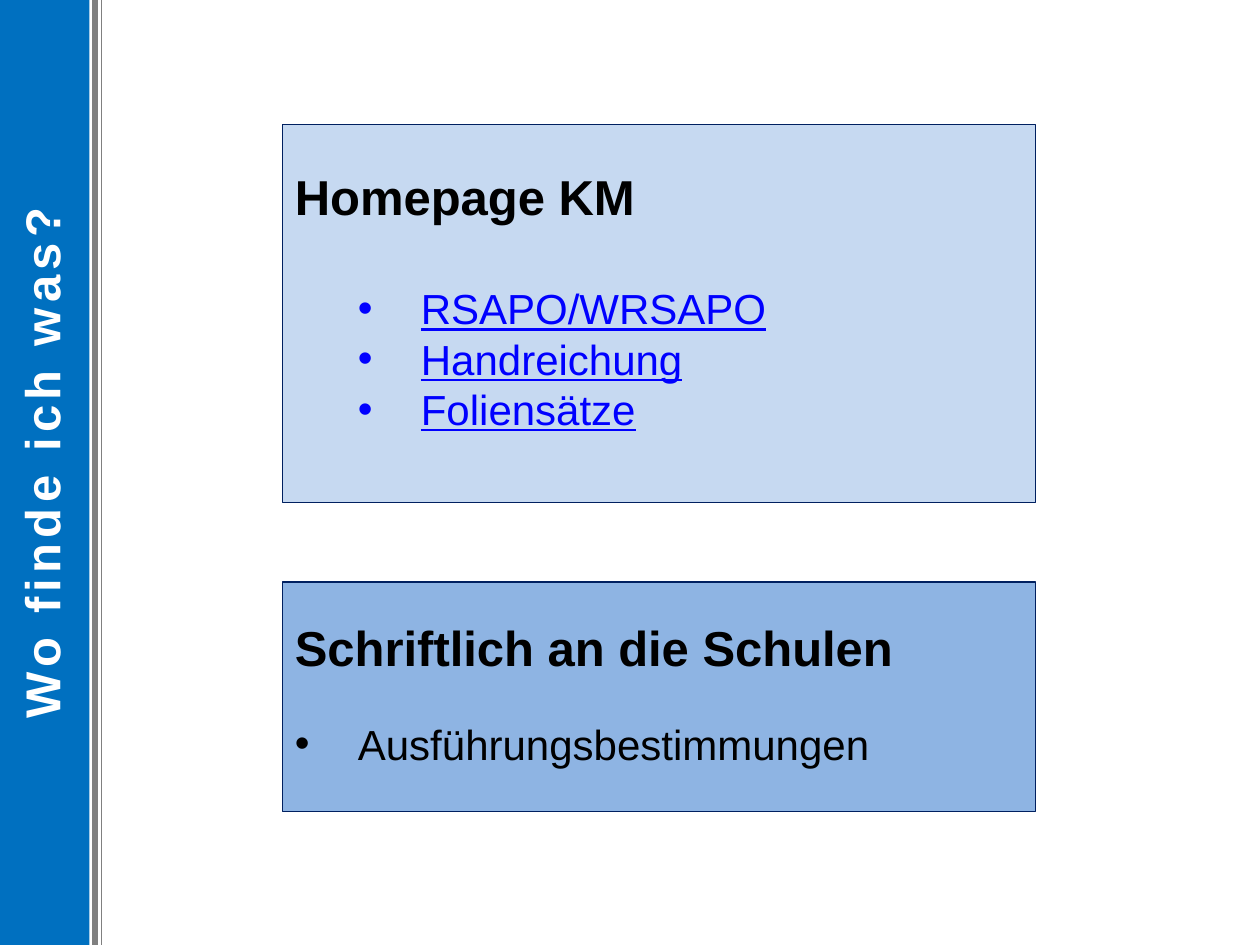
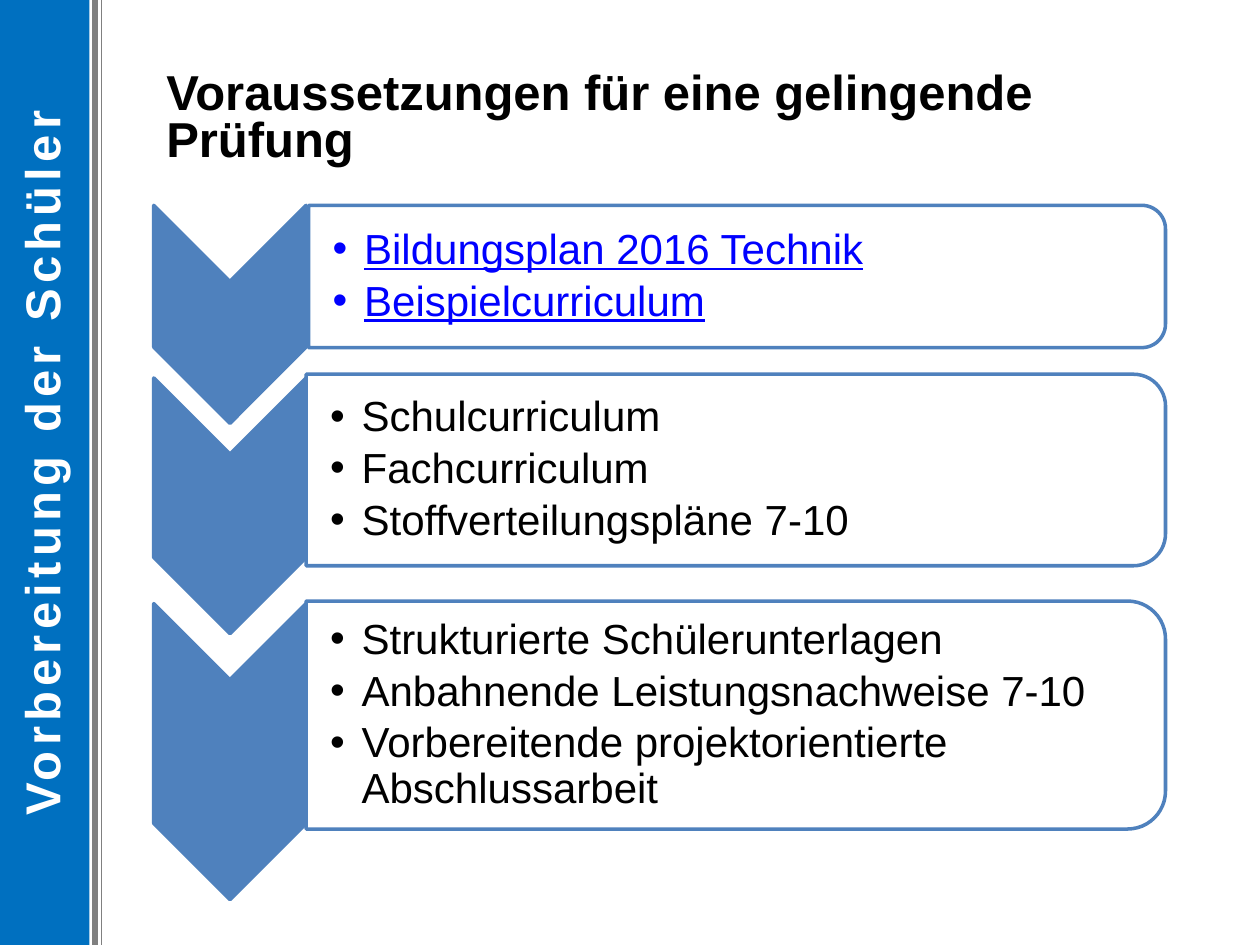
from lxml import etree
from pptx import Presentation
from pptx.dml.color import RGBColor
from pptx.enum.shapes import MSO_CONNECTOR, MSO_SHAPE
from pptx.enum.text import MSO_ANCHOR, MSO_AUTO_SIZE, PP_ALIGN
from pptx.oxml.ns import qn
from pptx.util import Inches, Pt

STRAIGHT = MSO_CONNECTOR.STRAIGHT
RECTANGLE = MSO_SHAPE.RECTANGLE
CHEVRON = MSO_SHAPE.CHEVRON
ROUNDED_PANEL = MSO_SHAPE.ROUND_2_SAME_RECTANGLE
TOP, MIDDLE = MSO_ANCHOR.TOP, MSO_ANCHOR.MIDDLE
LEFT, CENTER = PP_ALIGN.LEFT, PP_ALIGN.CENTER
NO_AUTOSIZE = MSO_AUTO_SIZE.NONE

SLIDE_WIDTH, SLIDE_HEIGHT = 10, 7.5
TWO_CONTENT_LAYOUT, COMPARISON_LAYOUT = 3, 4
BLACK, WHITE, LINK = "000000", "FFFFFF", "0000FF"
BAND, GREY, NAVY, STEEL = "0070C0", "808080", "002060", "4F81BD"
RULES = [(0.75, 3), (0.77, 1.5), (0.8, 0.25)]

HEADING = {"name": "Arial", "size": Pt(28), "bold": True, "underline": False}
ITEM = {"name": "Arial", "size": Pt(24), "bold": False, "underline": False}
LINKED_ITEM = {**ITEM, "underline": True}


def color(hex_value):
    return RGBColor.from_string(hex_value)


def set_attributes(target, values):
    for name, value in values.items():
        setattr(target, name, value)


def turn_box(box):
    left, top, width, height = box
    return left + (width - height) / 2, top + (height - width) / 2, height, width


def paint(shape, fill, line=None, line_width=0.75):
    shape.fill.solid()
    shape.fill.fore_color.rgb = color(fill)
    if line:
        shape.line.color.rgb = color(line)
        shape.line.width = Pt(line_width)
    else:
        shape.line.fill.background()


def add_preset(slide, kind, box, fill, line=None, line_width=0.75, rotation=0):
    shape_box = turn_box(box) if rotation else box
    shape = slide.shapes.add_shape(kind, *map(Inches, shape_box))
    shape.rotation = rotation
    shape.shadow.inherit = False
    paint(shape, fill, line, line_width)
    return shape


def place_placeholder(slide, index, box, anchor=TOP, insets=(0.1, 0.05, 0.1, 0.05)):
    shape = slide.placeholders[index]
    slide.shapes._spTree.append(shape._element)
    names = ("left", "top", "width", "height")
    set_attributes(shape, dict(zip(names, map(Inches, box))))
    margins = ("margin_left", "margin_top", "margin_right", "margin_bottom")
    set_attributes(shape.text_frame, {
        "word_wrap": True, "auto_size": NO_AUTOSIZE, "vertical_anchor": anchor,
        **dict(zip(margins, map(Inches, insets)))})
    return shape


def write_paragraph(frame, text, font, hex_value, alignment=LEFT, indent=0,
                    hanging=0, line_spacing=1.0, space_after=0):
    paragraph = frame.paragraphs[0]
    if paragraph.runs:
        paragraph = frame.add_paragraph()
    set_attributes(paragraph, {
        "alignment": alignment, "line_spacing": line_spacing,
        "space_before": Pt(0), "space_after": Pt(space_after)})
    properties = paragraph._p.get_or_add_pPr()
    properties.set("marL", str(Inches(indent)))
    properties.set("indent", str(-Inches(hanging)))
    if hanging:
        etree.SubElement(properties, qn("a:buFont")).set("typeface", "Arial")
        etree.SubElement(properties, qn("a:buChar")).set("char", "•")
    else:
        etree.SubElement(properties, qn("a:buNone"))
    run = paragraph.add_run()
    run.text = text
    set_attributes(run.font, font)
    run.font.color.rgb = color(hex_value)
    return run


def add_side_band(slide, title):
    add_preset(slide, RECTANGLE, (0, 0, 0.71, SLIDE_HEIGHT), BAND)
    for position, width in RULES:
        rule = slide.shapes.add_connector(
            STRAIGHT, Inches(position), Inches(SLIDE_HEIGHT), Inches(position), 0)
        rule.line.color.rgb = color(GREY)
        rule.line.width = Pt(width)
        etree.SubElement(rule._element.spPr, qn("a:effectLst"))
    shape = place_placeholder(slide, 0, turn_box((0.04, 0.21, 0.67, 6.93)))
    shape.rotation = 270
    run = write_paragraph(shape.text_frame, title, HEADING, WHITE, CENTER)
    run._r.get_or_add_rPr().set("spc", "300")


def add_source_box(slide, index, box, fill, heading, items, font, hex_value,
                   top_inset, heading_gap, indent):
    shape = place_placeholder(slide, index, box, insets=(0.1, top_inset, 0.1, 0.05))
    paint(shape, fill, NAVY)
    write_paragraph(shape.text_frame, heading, HEADING, BLACK, space_after=heading_gap)
    for item in items:
        write_paragraph(shape.text_frame, item, font, hex_value,
                        indent=indent, hanging=0.5)


def add_step(slide, index, box, chevron_top, chevron_height, items, font, hex_value):
    left, top, width, height = box
    add_preset(slide, CHEVRON, (1.22, chevron_top, 1.21, chevron_height),
               STEEL, STEEL, 2, 90)
    panel = add_preset(slide, ROUNDED_PANEL, box, WHITE, STEEL, 2, 90)
    panel_color = panel._element.spPr.find(qn("a:solidFill"))[0]
    etree.SubElement(panel_color, qn("a:alpha")).set("val", "90000")
    inset = 0.05 * height
    shape = place_placeholder(
        slide, index, (left, top + inset, width - 0.07, height - 2 * inset),
        MIDDLE, (0.19, 0.02, 0.02, 0.02))
    for item in items:
        write_paragraph(shape.text_frame, item, font, hex_value, indent=0.25,
                        hanging=0.25, line_spacing=0.9, space_after=3.6)


def add_sources_slide(presentation):
    slide = presentation.slides.add_slide(
        presentation.slide_layouts[TWO_CONTENT_LAYOUT])
    add_side_band(slide, "Wo finde ich was?")
    add_source_box(slide, 1, (2.24, 0.99, 5.98, 3), "C6D9F1", "Homepage KM",
                   ["RSAPO/WRSAPO", "Handreichung", "Foliensätze"],
                   LINKED_ITEM, LINK, 0.33, 33, 1)
    add_source_box(slide, 2, (2.24, 4.62, 5.98, 1.82), "8EB4E3",
                   "Schriftlich an die Schulen", ["Ausführungsbestimmungen"],
                   ITEM, BLACK, 0.28, 24, 0.5)


def add_preparation_slide(presentation):
    slide = presentation.slides.add_slide(
        presentation.slide_layouts[COMPARISON_LAYOUT])
    add_side_band(slide, "Vorbereitung der Schüler")
    heading = place_placeholder(slide, 1, (1.22, 0.53, 8.64, 0.85))
    write_paragraph(heading.text_frame, "Voraussetzungen für eine gelingende Prüfung",
                    HEADING, BLACK, line_spacing=0.8)
    steps = [
        ((2.45, 1.63, 6.8, 1.13), 1.63, 1.73, LINKED_ITEM, LINK,
         ["Bildungsplan 2016 Technik", "Beispielcurriculum"]),
        ((2.43, 2.97, 6.82, 1.52), 3, 2.03, ITEM, BLACK,
         ["Schulcurriculum", "Fachcurriculum", "Stoffverteilungspläne 7-10"]),
        ((2.43, 4.77, 6.82, 1.81), 4.79, 2.35, ITEM, BLACK,
         ["Strukturierte Schülerunterlagen", "Anbahnende Leistungsnachweise 7-10",
          "Vorbereitende projektorientierte Abschlussarbeit"]),
    ]
    for index, (box, chevron_top, chevron_height, font, hex_value, items) in enumerate(
            steps, 2):
        add_step(slide, index, box, chevron_top, chevron_height, items, font, hex_value)


def main():
    presentation = Presentation()
    presentation.slide_width = Inches(SLIDE_WIDTH)
    presentation.slide_height = Inches(SLIDE_HEIGHT)
    add_sources_slide(presentation)
    add_preparation_slide(presentation)
    presentation.save("out.pptx")


if __name__ == "__main__":
    main()
